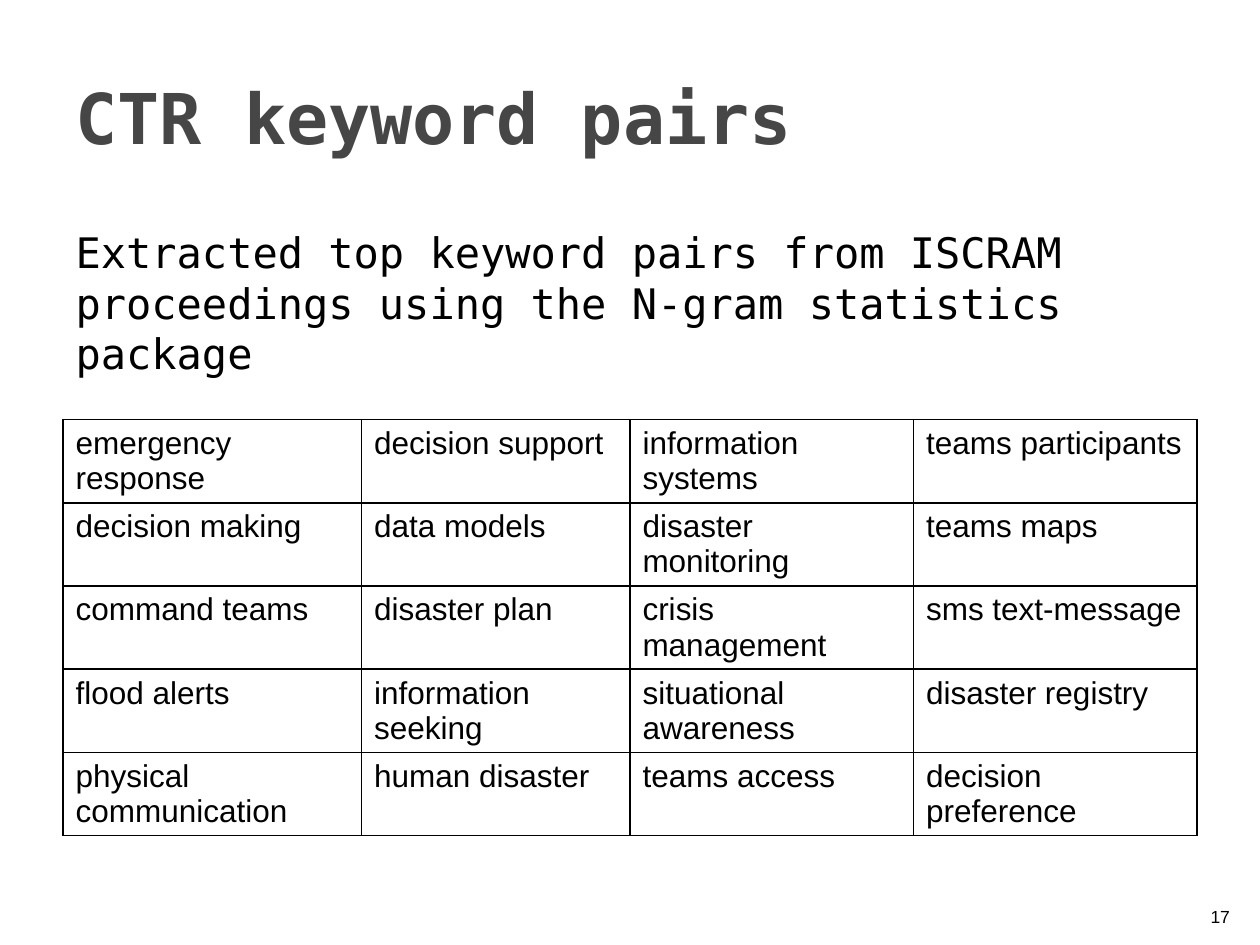
from dataclasses import dataclass
from lxml.etree import SubElement as Sub
from pptx import Presentation
from pptx.dml.color import RGBColor as Rgb
from pptx.enum.text import MSO_ANCHOR as Anchor, MSO_AUTO_SIZE as Fit, PP_ALIGN as Align
from pptx.oxml.ns import qn
from pptx.util import Inches, Pt


@dataclass(frozen=True)
class Theme:
    mono: str = "DejaVu Sans Mono"
    sans: str = "Arial"
    black: str = "000000"
    gray: str = "464646"
    white: str = "FFFFFF"
    head: int = 40
    lead: int = 24
    cell: int = 18
    page: int = 10
    rule: int = 1


THEME = Theme()
PAIRS = [
    ["emergency response", "decision support", "information systems", "teams participants"],
    ["decision making", "data models", "disaster monitoring", "teams maps"],
    ["command teams", "disaster plan", "crisis management", "sms text-message"],
    ["flood alerts", "information seeking", "situational awareness", "disaster registry"],
    ["physical communication", "human disaster", "teams access", "decision preference"],
]
WIDTHS = [2.37, 2.13, 2.25, 2.25]
ROW = 0.66


def place(shape, box):
    shape.left, shape.top, shape.width, shape.height = map(Inches, box)


def write(frame, text, font, size, color=THEME.black, bold=False):
    para = frame.paragraphs[0]
    run = para.add_run()
    run.text = text
    run.font.name = font
    run.font.size = Pt(size)
    run.font.bold = bold
    run.font.color.rgb = Rgb.from_string(color)
    return para


def add_title(slide, box):
    shape = slide.shapes.title
    place(shape, box)
    frame = shape.text_frame
    frame.auto_size = Fit.NONE
    frame.vertical_anchor = Anchor.MIDDLE
    para = write(frame, "CTR keyword pairs", THEME.mono, THEME.head, THEME.gray, True)
    para.alignment = Align.LEFT


def add_lead(slide, box):
    shape = slide.placeholders[1]
    place(shape, box)
    frame = shape.text_frame
    frame.auto_size = Fit.NONE
    text = "Extracted top keyword pairs from ISCRAM proceedings using the N-gram statistics package"
    para = write(frame, text, THEME.mono, THEME.lead)
    para.space_before = Pt(4)
    props = para._p.get_or_add_pPr()
    props.set("marL", "0")
    props.set("indent", "0")
    Sub(props, qn("a:buNone"))


def frame_cell(cell):
    props = cell._tc.get_or_add_tcPr()
    for side in ("L", "R", "T", "B"):
        line = Sub(props, qn(f"a:ln{side}"), w=str(Pt(THEME.rule)))
        fill = Sub(line, qn("a:solidFill"))
        Sub(fill, qn("a:srgbClr"), val=THEME.black)


def add_pairs(slide, box):
    shape = slide.shapes.add_table(len(PAIRS), len(WIDTHS), *map(Inches, box))
    table = shape.table
    table.first_row = table.horz_banding = False
    for col, width in zip(table.columns, WIDTHS):
        col.width = Inches(width)
    for row, texts in zip(table.rows, PAIRS):
        row.height = Inches(ROW)
        for cell, text in zip(row.cells, texts):
            frame_cell(cell)
            cell.fill.solid()
            cell.fill.fore_color.rgb = Rgb.from_string(THEME.white)
            write(cell.text_frame, text, THEME.sans, THEME.cell)


def add_page(slide, box):
    frame = slide.shapes.add_textbox(*map(Inches, box)).text_frame
    frame.word_wrap = True
    frame.vertical_anchor = Anchor.BOTTOM
    write(frame, "17", THEME.sans, THEME.page).alignment = Align.RIGHT


def main():
    deck = Presentation()
    deck.slide_width, deck.slide_height = Inches(10), Inches(7.5)
    slide = deck.slides.add_slide(deck.slide_layouts[1])
    add_title(slide, (0.5, 0.3, 9, 1.25))
    add_lead(slide, (0.5, 1.75, 9, 1.25))
    add_pairs(slide, (0.5, 3.33, sum(WIDTHS), ROW * len(PAIRS)))
    add_page(slide, (9.46, 7.01, 0.4, 0.4))
    deck.save("out.pptx")


if __name__ == "__main__":
    main()
